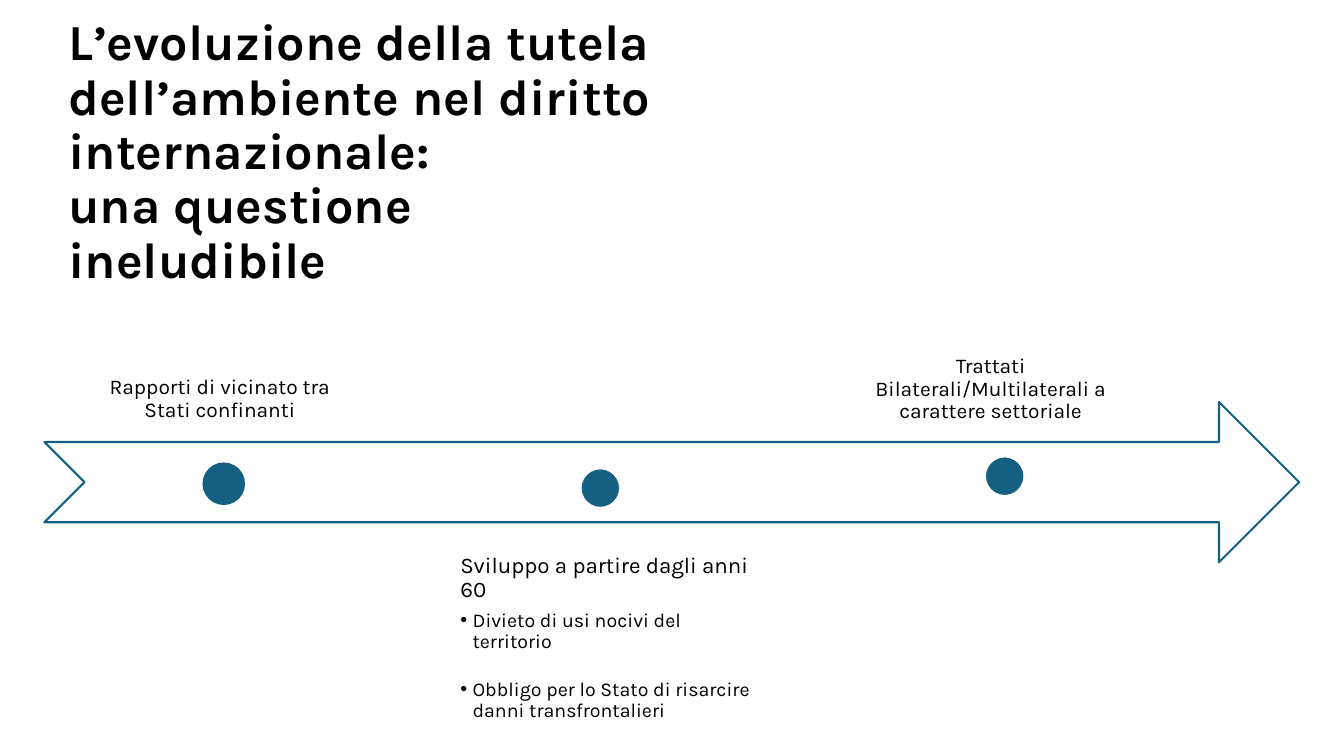
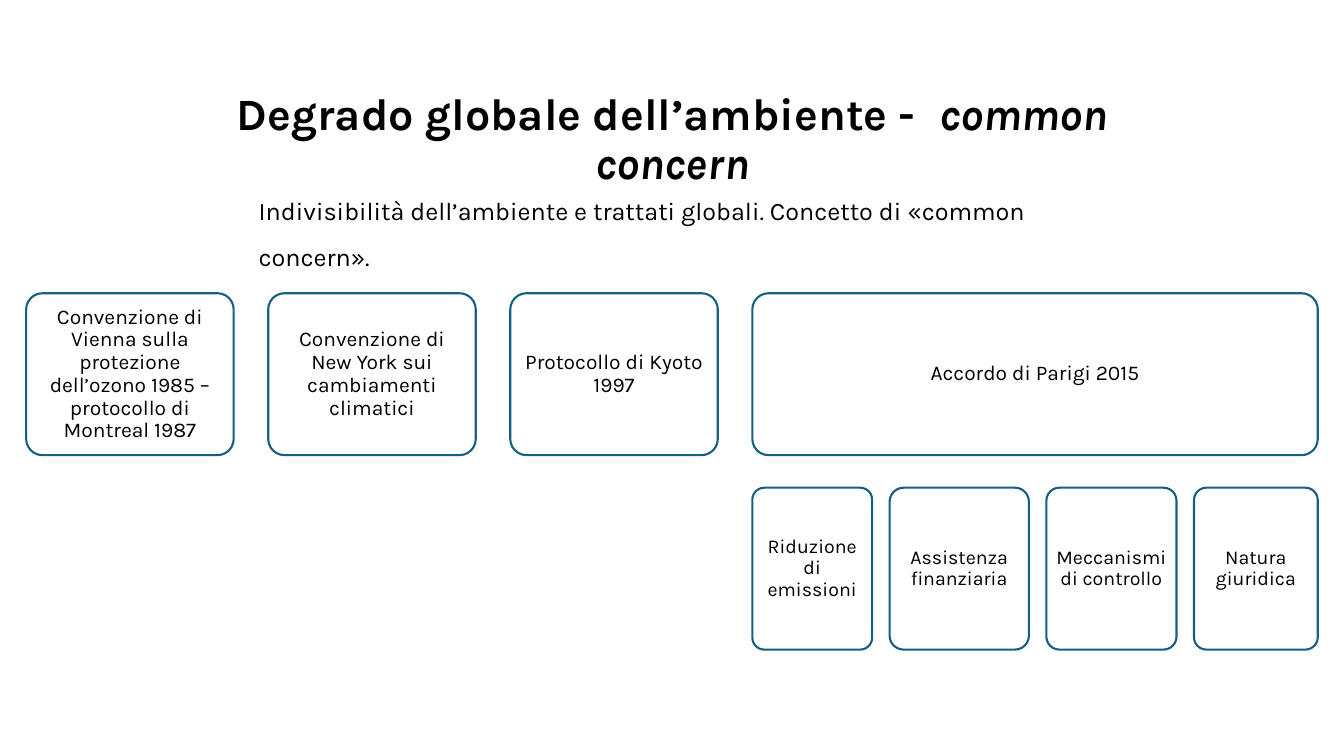
from lxml import etree
from pptx import Presentation
from pptx.dml.color import RGBColor
from pptx.enum import shapes as sh, text as tx
from pptx.oxml import ns
from pptx.util import Cm, Pt

BLACK = RGBColor(0x00, 0x00, 0x00)
WHITE = RGBColor(0xFF, 0xFF, 0xFF)
TEAL = RGBColor(0x15, 0x60, 0x82)
FONT = "Karla"
TITLE_INSETS = (0.25, 0.13)
LABEL_INSETS = (0.3, 0.3)
CARD_INSETS = (0.15, 0.15)
LEFT, CENTER = tx.PP_ALIGN.LEFT, tx.PP_ALIGN.CENTER
TOP, MIDDLE, BOTTOM = tx.MSO_ANCHOR.TOP, tx.MSO_ANCHOR.MIDDLE, tx.MSO_ANCHOR.BOTTOM


def add_outline(slide, preset, box, fill=WHITE, line=TEAL):
    """Draw a flat preset shape; box is left, top, width, height in cm."""
    outline = slide.shapes.add_shape(preset, *map(Cm, box))
    outline.shadow.inherit = False
    outline.fill.solid()
    outline.fill.fore_color.rgb = fill
    outline.line.color.rgb = line
    outline.line.width = Pt(1.5)
    return outline


def write(holder, runs, size, align=LEFT, anchor=TOP, insets=TITLE_INSETS,
          bold=False, spacing=0.9, after=0):
    """Add one paragraph of (text, italic) runs to a shape or text box."""
    frame = holder.text_frame
    frame.word_wrap = True
    frame.vertical_anchor = anchor
    frame.margin_left = frame.margin_right = Cm(insets[0])
    frame.margin_top = frame.margin_bottom = Cm(insets[1])
    paragraph = frame.paragraphs[-1]
    if paragraph.runs:
        paragraph = frame.add_paragraph()
    paragraph.alignment = align
    paragraph.line_spacing = spacing
    paragraph.space_after = Pt(after)
    for number, (words, italic) in enumerate(runs):
        for part, line in enumerate(words.split("\n")):
            if part:
                paragraph.add_line_break()
            run = paragraph.add_run()
            run.text = line
            run.font.name = FONT
            run.font.size = Pt(size)
            run.font.bold = bold
            run.font.italic = italic
            run.font.color.rgb = BLACK
    return paragraph


prs = Presentation()
prs.slide_width, prs.slide_height = Cm(33.87), Cm(19.05)
blank = prs.slide_layouts[6]

# Slide 1: timeline
timeline = prs.slides.add_slide(blank)
title = timeline.shapes.add_textbox(Cm(1.47), Cm(1.63), Cm(15.47), Cm(5.79))
write(title, [("L’evoluzione della tutela dell’ambiente nel diritto internazionale: \n"
               "una questione ineludibile", False)], 36, anchor=BOTTOM, bold=True)

add_outline(timeline, sh.MSO_SHAPE.NOTCHED_RIGHT_ARROW, (1.12, 10.13, 31.62, 4.04))

# Milestone dots: left, top, diameter, line colour
for left, top, diameter, edge in [(5.13, 11.68, 1.02, TEAL),
                                  (14.63, 11.8, 1, WHITE),
                                  (24.82, 11.5, 1, WHITE)]:
    add_outline(timeline, sh.MSO_SHAPE.OVAL, (left, top, diameter, diameter), TEAL, edge)

# Labels above the arrow
for box, words in [
    ((1.88, 8.76, 7.32, 2.18), "Rapporti di vicinato tra Stati confinanti"),
    ((21.18, 8.51, 7.57, 2.46), "Trattati Bilaterali/Multilaterali a carattere settoriale"),
]:
    label = timeline.shapes.add_textbox(*map(Cm, box))
    write(label, [(words, False)], 15, CENTER, BOTTOM, LABEL_INSETS)

# Details below the arrow
details = timeline.shapes.add_textbox(Cm(11.3), Cm(13.67), Cm(8.1), Cm(4.04))
write(details, [("Sviluppo a partire dagli anni 60", False)], 16,
      insets=LABEL_INSETS, after=5.6)
for words, after in [("Divieto di usi nocivi del territorio", 19),
                     ("Obbligo per lo Stato di risarcire danni transfrontalieri", 0)]:
    rule = write(details, [(words, False)], 14, insets=LABEL_INSETS, after=after)
    properties = rule._p.get_or_add_pPr()
    properties.set("marL", str(int(Cm(0.31))))
    properties.set("indent", str(-int(Cm(0.31))))
    etree.SubElement(properties, ns.qn("a:buFont")).set("typeface", "Arial")
    etree.SubElement(properties, ns.qn("a:buChar")).set("char", "•")

# Slide 2: global treaties
treaties = prs.slides.add_slide(blank)
title = treaties.shapes.add_textbox(Cm(4.6), Cm(2.67), Cm(24.69), Cm(1.75))
write(title, [("Degrado globale dell’ambiente -  ", False), ("common concern", True)],
      32, CENTER, MIDDLE, bold=True)
intro = treaties.shapes.add_textbox(Cm(6.27), Cm(4.42), Cm(21.97), Cm(1.3))
write(intro, [("Indivisibilità dell’ambiente e trattati globali. "
               "Concetto di «common concern».", False)], 18, spacing=1.5)

# Rows of cards: left, top, gap, text size, then (width, words)
CARD_HEIGHT = 4.08
for left, top, gap, size, cards in [
    (0.66, 7.39, 0.87, 15, [
        (5.23, "Convenzione di Vienna sulla protezione dell’ozono 1985 – "
               "protocollo di Montreal 1987"),
        (5.23, "Convenzione di New York sui cambiamenti climatici"),
        (5.23, "Protocollo di Kyoto 1997"),
        (14.25, "Accordo di Parigi 2015"),
    ]),
    (18.96, 12.29, 0.44, 14, [
        (3.02, "Riduzione di emissioni"),
        (3.51, "Assistenza finanziaria"),
        (3.28, "Meccanismi di controllo"),
        (3.12, "Natura giuridica"),
    ]),
]:
    for width, words in cards:
        card = add_outline(treaties, sh.MSO_SHAPE.ROUNDED_RECTANGLE,
                           (left, top, width, CARD_HEIGHT))
        card.adjustments[0] = 0.1
        write(card, [(words, False)], size, CENTER, MIDDLE, CARD_INSETS)
        left += width + gap

prs.save("out.pptx")
